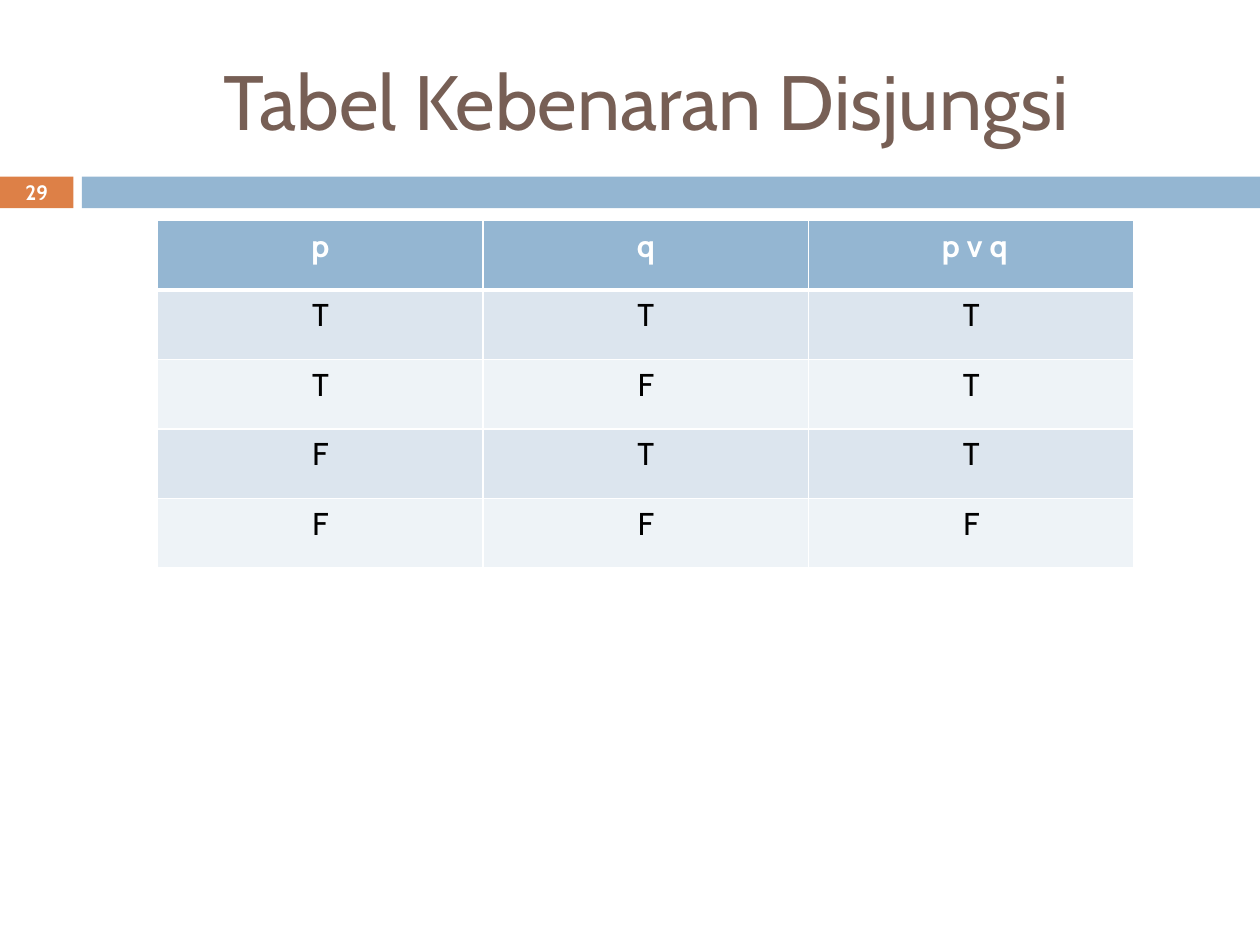
from dataclasses import dataclass

from lxml.etree import SubElement
from pptx import Presentation
from pptx.dml.color import RGBColor
from pptx.enum.shapes import MSO_SHAPE
from pptx.enum.text import MSO_ANCHOR, PP_ALIGN
from pptx.oxml.ns import qn
from pptx.util import Cm, Pt

FONT = "Cabin"
WHITE, BLACK, BROWN = "FFFFFF", "000000", "775F55"
BLUE, ORANGE = "94B6D2", "DD8047"
BANDS = ("DCE5EE", "EEF3F7")
TRUTH = (
    ("p", "q", " p v q"),
    ("T", "T", "T"),
    ("T", "F", "T"),
    ("F", "T", "T"),
    ("F", "F", "F"),
)


@dataclass
class Box:
    left: float
    top: float
    width: float
    height: float

    def place(self) -> tuple:
        return Cm(self.left), Cm(self.top), Cm(self.width), Cm(self.height)


@dataclass
class Bar:
    box: Box
    fill: str


@dataclass
class Label:
    box: Box
    text: str
    size: float
    color: str
    bold: bool = False
    inset: float = 0.25


BARS = (
    Bar(Box(0, 3.56, 1.48, 0.64), ORANGE),
    Bar(Box(1.65, 3.56, 23.75, 0.64), BLUE),
)
LABELS = (
    Label(Box(1.7, 0.64, 22.66, 2.74), "Tabel Kebenaran Disjungsi", 44, BROWN),
    Label(Box(0, 3.53, 1.48, 0.69), "29", 11.9, WHITE, True, 0),
)
GRID = Box(3.18, 4.45, 19.68, 7.0)


def paint(target, color: str) -> None:
    """Give a fill or a font a solid colour."""
    if hasattr(target, "solid"):
        target.solid()
        target.fore_color.rgb = RGBColor.from_string(color)
    else:
        target.color.rgb = RGBColor.from_string(color)


def write(frame, text: str, size: float, color: str, bold: bool) -> None:
    line = frame.paragraphs[0]
    line.alignment = PP_ALIGN.CENTER
    run = line.add_run()
    run.text = text
    run.font.name = FONT
    run.font.size = Pt(size)
    run.font.bold = bold
    paint(run.font, color)


def draw_bar(slide, bar: Bar) -> None:
    shape = slide.shapes.add_shape(MSO_SHAPE.RECTANGLE, *bar.box.place())
    shape.shadow.inherit = False
    paint(shape.fill, bar.fill)
    shape.line.fill.background()


def draw_label(slide, label: Label) -> None:
    frame = slide.shapes.add_textbox(*label.box.place()).text_frame
    frame.word_wrap = True
    frame.vertical_anchor = MSO_ANCHOR.MIDDLE
    frame.margin_left = frame.margin_right = Cm(label.inset)
    frame.margin_top = frame.margin_bottom = Cm(label.inset / 2)
    write(frame, label.text, label.size, label.color, label.bold)


def edge(cell, top: float, base: float) -> None:
    """Draw white cell borders; widths are in points."""
    props = cell._tc.get_or_add_tcPr()
    for side, width in (("L", 1), ("R", 1), ("T", top), ("B", base)):
        line = SubElement(props, qn(f"a:ln{side}"), w=str(Pt(width)))
        fill = SubElement(line, qn("a:solidFill"))
        SubElement(fill, qn("a:srgbClr"), val=WHITE)


def draw_table(slide, box: Box, rows: tuple) -> None:
    count, wide = len(rows), len(rows[0])
    table = slide.shapes.add_table(count, wide, *box.place()).table
    for col in table.columns:
        col.width = Cm(box.width / wide)
    for row in table.rows:
        row.height = Cm(box.height / count)
    for r, words in enumerate(rows):
        head = r == 0
        for c, word in enumerate(words):
            cell = table.cell(r, c)
            edge(cell, 3 if r == 1 else 1, 3 if head else 1)
            paint(cell.fill, BLUE if head else BANDS[(r - 1) % 2])
            write(cell.text_frame, word, 18, WHITE if head else BLACK, head)


def main() -> None:
    deck = Presentation()
    deck.slide_width, deck.slide_height = Cm(25.4), Cm(19.05)
    slide = deck.slides.add_slide(deck.slide_layouts[6])

    # Divider bars
    for bar in BARS:
        draw_bar(slide, bar)

    # Title and page number
    for label in LABELS:
        draw_label(slide, label)

    # Truth table
    draw_table(slide, GRID, TRUTH)

    deck.save("out.pptx")


if __name__ == "__main__":
    main()
